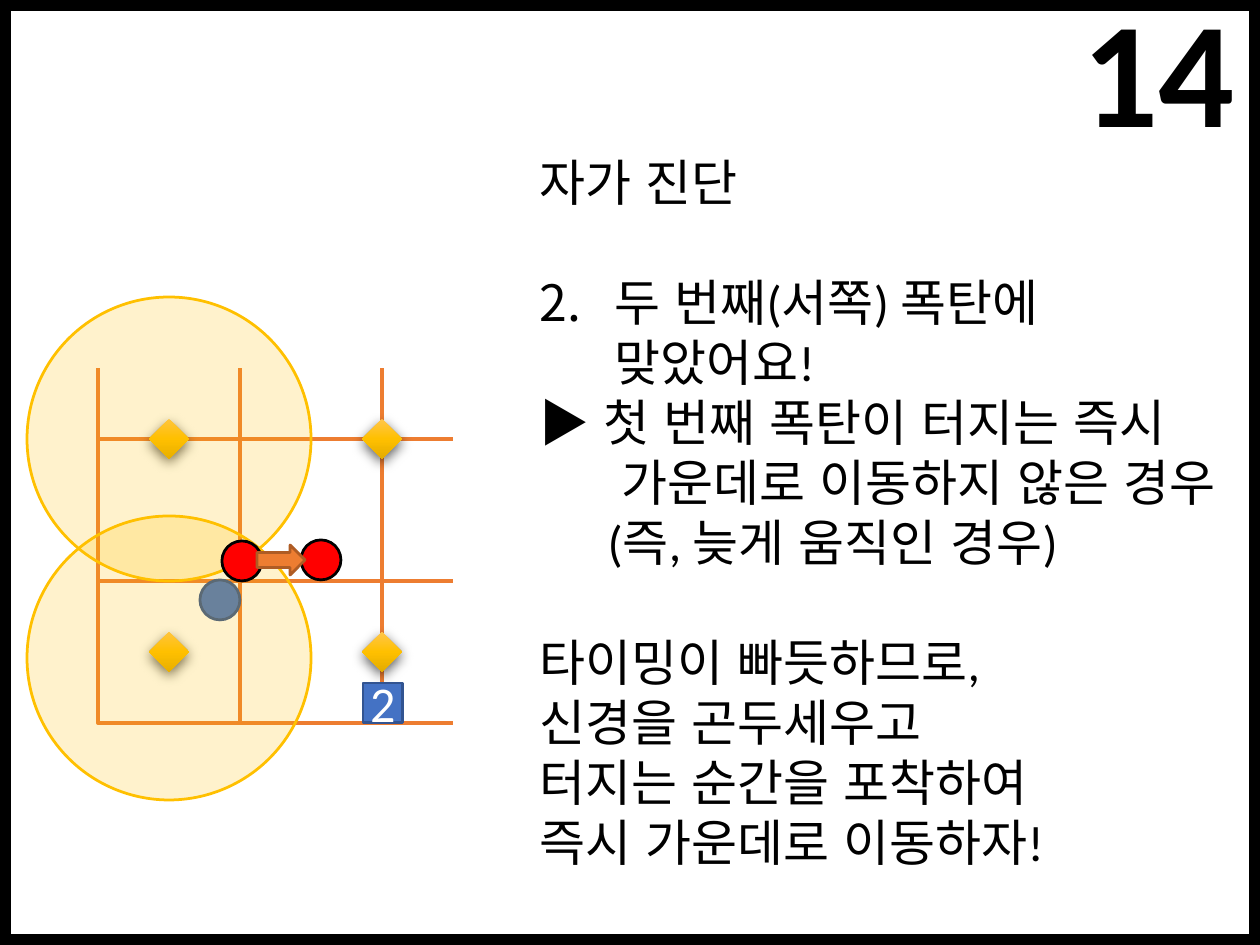
import lxml.etree
import pptx
import pptx.dml.color
import pptx.enum.lang
import pptx.enum.shapes
import pptx.enum.text
import pptx.oxml
import pptx.oxml.ns
import pptx.util

PX = 914400 // 200
SHAPE = pptx.enum.shapes.MSO_SHAPE
ALIGN = pptx.enum.text.PP_ALIGN
ANCHOR = pptx.enum.text.MSO_ANCHOR
qn = pptx.oxml.ns.qn
ORANGE, BLUE, BLUE_EDGE = "ED7D31", "4472C4", "325491"
GOLD, RED, BLACK, WHITE = "FFC000", "FF0000", "000000", "FFFFFF"
GOLD_STOPS = [(0, "FFC64B"), (50, GOLD), (100, "E3AB00")]
LINE_HEIGHT = 21.6


def color(value):
    return pptx.dml.color.RGBColor.from_string(value)


def element(parent, tag, **attributes):
    return lxml.etree.SubElement(parent, qn(tag), attributes)


def place(item, box):
    item.left, item.top, item.width, item.height = [round(value * PX) for value in box]


def add_shape(page, kind, box, fill=None, line=None, weight=1, alpha=None):
    shape = page.shapes.add_shape(kind, *[round(value * PX) for value in box])
    shape.shadow.inherit = False
    if fill:
        shape.fill.solid()
        shape.fill.fore_color.rgb = color(fill)
        if alpha:
            tint = shape.fill._xPr.find(qn("a:solidFill"))[0]
            element(tint, "a:alpha", val=str(alpha * 1000))
    else:
        shape.fill.background()
    if line:
        shape.line.color.rgb = color(line)
        shape.line.width = pptx.util.Pt(weight)
    else:
        shape.line.fill.background()
    return shape


def add_line(page, start, end):
    points = [round(value * PX) for value in (*start, *end)]
    line = page.shapes.add_connector(pptx.enum.shapes.MSO_CONNECTOR.STRAIGHT, *points)
    line.line.color.rgb = color(ORANGE)
    line.line.width = pptx.util.Pt(1.5)
    element(line._element.spPr, "a:effectLst")


def add_bomb(page, x, y, size=40):
    bomb = add_shape(page, SHAPE.DIAMOND, (x - size / 2, y - size / 2, size, size))
    properties = bomb._element.spPr
    gradient = pptx.oxml.parse_xml(
        '<a:gradFill xmlns:a="http://schemas.openxmlformats.org/drawingml/2006/main" rotWithShape="1"/>')
    stops = element(gradient, "a:gsLst")
    for position, value in GOLD_STOPS:
        stop = element(stops, "a:gs", pos=str(position * 1000))
        element(stop, "a:srgbClr", val=value)
    element(gradient, "a:lin", ang="5400000", scaled="0")
    properties.replace(properties.find(qn("a:noFill")), gradient)
    shadow = element(properties.find(qn("a:effectLst")), "a:outerShdw", blurRad="57150",
                     dist="19050", dir="5400000", algn="ctr", rotWithShape="0")
    shade = element(shadow, "a:srgbClr", val=BLACK)
    element(shade, "a:alpha", val="63000")


def format_text(para, size, value, bold=False):
    for span in para.runs:
        span.font.name = "Calibri"
        span.font.size = pptx.util.Pt(size)
        span.font.color.rgb = color(value)
        span.font.bold = bold
        span.font.language_id = pptx.enum.lang.MSO_LANGUAGE_ID.KOREAN


def add_frame(page, box, thickness=10):
    left, top, width, height = box
    for edge in [(left, top, width, thickness),
                 (left, top + thickness, thickness, height - thickness),
                 (left, top + height - thickness, width, thickness),
                 (left + width - thickness, top, thickness, height - thickness)]:
        add_shape(page, SHAPE.RECTANGLE, edge, BLACK, BLACK)


def add_page_title(page, box, text):
    title = page.shapes.title
    place(title, box)
    frame = title.text_frame
    frame.text = text
    frame.word_wrap = False
    frame.vertical_anchor = ANCHOR.TOP
    para = frame.paragraphs[0]
    para.alignment = ALIGN.CENTER
    format_text(para, 54, BLACK, True)
    outline = pptx.oxml.parse_xml(
        '<a:ln xmlns:a="http://schemas.openxmlformats.org/drawingml/2006/main" w="9525"/>')
    element(element(outline, "a:solidFill"), "a:srgbClr", val=WHITE)
    para.runs[0].font._element.insert(0, outline)


def add_arena(page, box):
    left, top, cell, reach = box
    right = left + 2 * cell
    for step in range(3):
        x, y = left + step * cell, top + step * cell
        add_line(page, (x, top), (x, top - reach))
        add_line(page, (right, y), (right + reach, y))
    for row in range(2):
        for column in range(2):
            add_shape(page, SHAPE.RECTANGLE,
                      (left + column * cell, top + row * cell, cell, cell), None, ORANGE, 1.5)
    add_shape(page, SHAPE.OVAL, (left + 102, top + 141, 40, 40), BLUE, BLUE_EDGE)
    for y in (top, top + 1.5 * cell):
        for x in (left + cell / 2, right):
            add_bomb(page, x, y)

    marker = add_shape(page, SHAPE.RECTANGLE, (left + 265, top + 244, 40, 40), BLUE, BLUE_EDGE)
    frame = marker.text_frame
    frame.text = "2"
    frame.word_wrap = False
    frame.vertical_anchor = ANCHOR.MIDDLE
    frame.paragraphs[0].alignment = ALIGN.CENTER
    format_text(frame.paragraphs[0], 18, WHITE)

    for y in (top + 77, top - cell):
        add_shape(page, SHAPE.OVAL, (left + cell / 2 - cell, y, 2 * cell, 2 * cell),
                  GOLD, GOLD, alpha=20)
    for x, y in ((left + 124, top + 102), (left + 203, top + 101)):
        add_shape(page, SHAPE.OVAL, (x, y, 40, 40), RED, BLACK)
    arrow = add_shape(page, SHAPE.UP_ARROW, (left + 168, top + 97, 30, 48), ORANGE, "AF5C24")
    arrow.rotation = 90


def add_advice(page, box):
    frame = page.shapes.add_textbox(*[value * PX for value in box]).text_frame
    frame.word_wrap = True
    lines = [
        ("자가 진단", 0, 0, True),
        ("두 번째(서쪽) 폭탄에\v맞았어요!", 75, -75, False),
        ("▶ 첫 번째 폭탄이 터지는 즉시", 0, 0, False),
        ("가운데로 이동하지 않은 경우", 82, 0, False),
        ("(즉, 늦게 움직인 경우)", 68, 0, True),
        ("타이밍이 빠듯하므로,", 0, 0, False),
        ("신경을 곤두세우고", 0, 0, False),
        ("터지는 순간을 포착하여", 0, 0, False),
        ("즉시 가운데로 이동하자!", 0, 0, False),
    ]
    for index, (text, margin, hanging, ends_block) in enumerate(lines):
        para = frame.add_paragraph() if index else frame.paragraphs[0]
        para.text = text
        format_text(para, 18, BLACK)
        if ends_block:
            para.space_after = pptx.util.Pt(LINE_HEIGHT)
        properties = para._p.get_or_add_pPr()
        properties.set("marL", str(margin * PX))
        properties.set("indent", str(hanging * PX))
        if hanging:
            element(properties, "a:buFont", typeface="+mj-lt")
            element(properties, "a:buAutoNum", type="arabicPeriod", startAt="2")


def main():
    deck = pptx.Presentation()
    deck.slide_width, deck.slide_height = 1260 * PX, 945 * PX
    page = deck.slides.add_slide(deck.slide_layouts[5])
    add_frame(page, (0, 0, 1260, 945))
    add_page_title(page, (1062, -33, 194, 202), "14")
    add_arena(page, (98, 439, 142, 71))
    add_advice(page, (520, 142, 730, 808))
    deck.save("out.pptx")


if __name__ == "__main__":
    main()
